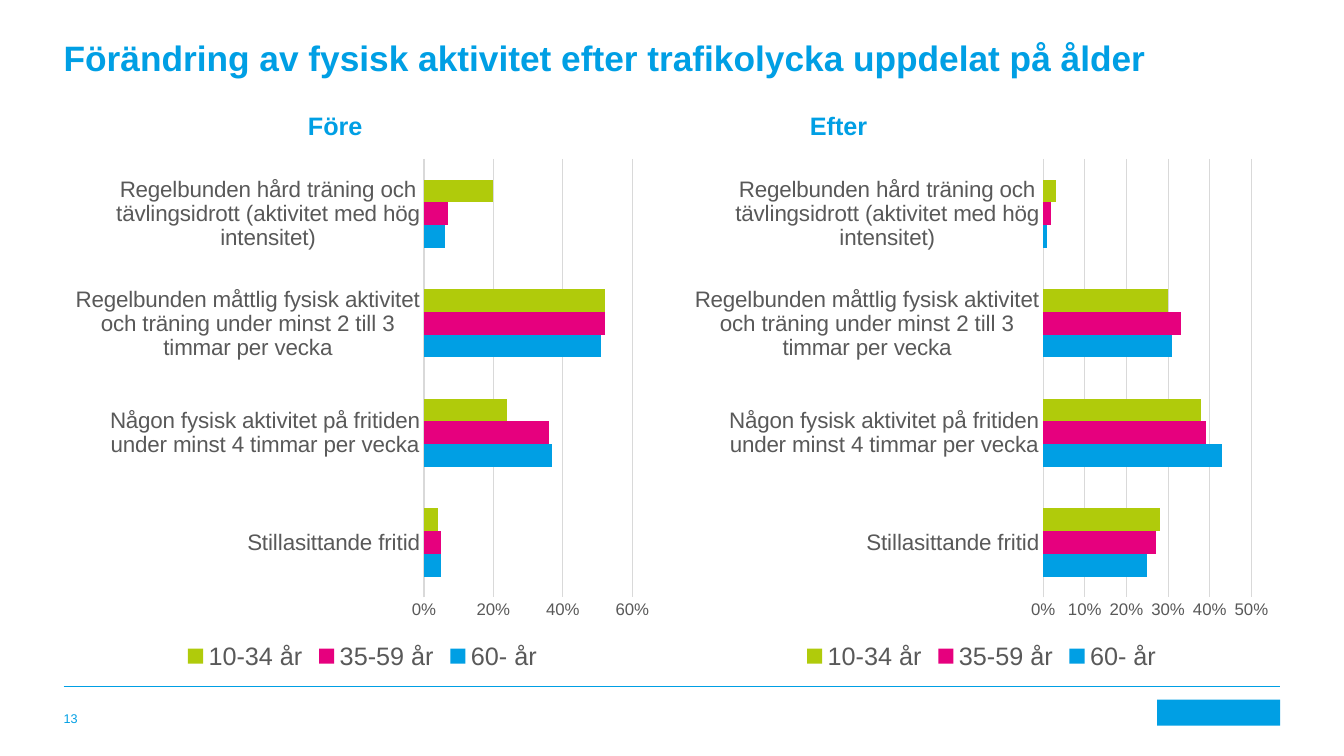
from pptx import Presentation
from pptx.chart.data import CategoryChartData
from pptx.dml.color import RGBColor
from pptx.enum.chart import XL_CHART_TYPE, XL_LEGEND_POSITION, XL_TICK_MARK
from pptx.enum.shapes import MSO_CONNECTOR, MSO_SHAPE
from pptx.enum.text import MSO_ANCHOR
from pptx.util import Pt
from lxml.etree import SubElement
from pptx.oxml.ns import qn

FONT = "Arial"
COLORS = {
    "blue": "009FE4",
    "pink": "E6007E",
    "green": "B0CB0B",
    "label": "595959",
    "grid": "D9D9D9",
    "base": "000000",
}

TITLE = "Förändring av fysisk aktivitet efter trafikolycka uppdelat på ålder"
PAGE_NUMBER = "13"
ACTIVITIES = [
    "Stillasittande fritid",
    "Någon fysisk aktivitet på fritiden under minst 4 timmar per vecka",
    "Regelbunden måttlig fysisk aktivitet och träning under minst 2 till 3 timmar per vecka",
    "Regelbunden hård träning och tävlingsidrott (aktivitet med hög intensitet)",
]
AGE_GROUPS = [("60- år", "blue"), ("35-59 år", "pink"), ("10-34 år", "green")]
PERIODS = [
    {
        "heading": "Före",
        "heading_left": 220,
        "axis": (0.6, 0.2),
        "shares": [
            (0.05, 0.37, 0.51, 0.06),
            (0.05, 0.36, 0.52, 0.07),
            (0.04, 0.24, 0.52, 0.2),
        ],
    },
    {
        "heading": "Efter",
        "heading_left": 578.5,
        "axis": (0.5, 0.1),
        "shares": [
            (0.25, 0.43, 0.31, 0.01),
            (0.27, 0.39, 0.33, 0.02),
            (0.28, 0.38, 0.3, 0.03),
        ],
    },
]

SLIDE_WIDTH, SLIDE_HEIGHT = 960, 540
MARGIN = 45.5
CONTENT_WIDTH = SLIDE_WIDTH - 2 * MARGIN
CHART_GAP = 15.5
CHART_WIDTH = (CONTENT_WIDTH - CHART_GAP) / 2
CHART_TOP, CHART_HEIGHT = 106, 376.5
FOOTER_RULE_TOP = 490.5
FOOTER_TOP, FOOTER_HEIGHT = 499.7, 18.7
LOGO_WIDTH = 88


def color(name):
    return RGBColor.from_string(COLORS[name])


def style_font(font, size, tint, bold=False):
    font.name = FONT
    font.size = Pt(size)
    font.bold = bold
    font.color.rgb = color(tint)


def add_text(slide, text, *, left, top, width, height, size, bold=False, anchor=MSO_ANCHOR.TOP):
    frame = slide.shapes.add_textbox(Pt(left), Pt(top), Pt(width), Pt(height)).text_frame
    frame.word_wrap = True
    frame.vertical_anchor = anchor
    frame.margin_left = frame.margin_right = frame.margin_top = frame.margin_bottom = 0
    run = frame.paragraphs[0].add_run()
    run.text = text
    style_font(run.font, size, "blue", bold)


def style_line(line, tint, width):
    line.color.rgb = color(tint)
    line.width = Pt(width)


def add_activity_chart(slide, period, left):
    chart_data = CategoryChartData(number_format="0%")
    chart_data.categories = ACTIVITIES
    for (age_group, _), shares in zip(AGE_GROUPS, period["shares"]):
        chart_data.add_series(age_group, shares)
    chart = slide.shapes.add_chart(
        XL_CHART_TYPE.BAR_CLUSTERED,
        Pt(left), Pt(CHART_TOP), Pt(CHART_WIDTH), Pt(CHART_HEIGHT),
        chart_data,
    ).chart
    style_font(chart.font, 10, "base")
    chart.has_title = False
    chart.has_legend = True
    chart.legend.position = XL_LEGEND_POSITION.BOTTOM
    chart.legend.include_in_layout = False
    style_font(chart.legend.font, 18, "label")

    plot = chart.plots[0]
    plot.gap_width = 182
    plot.vary_by_categories = False
    for series, (_, tint) in zip(plot.series, AGE_GROUPS):
        series.invert_if_negative = False
        series.format.fill.solid()
        series.format.fill.fore_color.rgb = color(tint)

    activity_axis, share_axis = chart.category_axis, chart.value_axis
    for axis, size in ((activity_axis, 16), (share_axis, 12)):
        axis.major_tick_mark = axis.minor_tick_mark = XL_TICK_MARK.NONE
        style_font(axis.tick_labels.font, size, "label")
    activity_axis.has_major_gridlines = False
    style_line(activity_axis.format.line, "grid", 0.75)
    share_axis.minimum_scale = 0
    share_axis.maximum_scale, share_axis.major_unit = period["axis"]
    share_axis.has_major_gridlines = True
    style_line(share_axis.major_gridlines.format.line, "grid", 0.75)
    share_axis.format.line.fill.background()
    share_axis.tick_labels.number_format = "0%"
    share_axis.tick_labels.number_format_is_linked = False


def add_footer(slide):
    right = SLIDE_WIDTH - MARGIN
    rule = slide.shapes.add_connector(
        MSO_CONNECTOR.STRAIGHT, Pt(MARGIN), Pt(FOOTER_RULE_TOP), Pt(right), Pt(FOOTER_RULE_TOP)
    )
    style_line(rule.line, "blue", 0.5)
    SubElement(rule._element.spPr, qn("a:effectLst"))
    add_text(slide, PAGE_NUMBER, left=MARGIN, top=FOOTER_TOP, width=42, height=FOOTER_HEIGHT,
             size=9, anchor=MSO_ANCHOR.BOTTOM)
    logo = slide.shapes.add_shape(
        MSO_SHAPE.RECTANGLE, Pt(right - LOGO_WIDTH), Pt(FOOTER_TOP), Pt(LOGO_WIDTH), Pt(FOOTER_HEIGHT)
    )
    logo.shadow.inherit = False
    logo.fill.solid()
    logo.fill.fore_color.rgb = color("blue")
    logo.line.fill.background()


def main():
    presentation = Presentation()
    presentation.slide_width, presentation.slide_height = Pt(SLIDE_WIDTH), Pt(SLIDE_HEIGHT)
    slide = presentation.slides.add_slide(presentation.slide_layouts[6])
    add_text(slide, TITLE, left=MARGIN, top=26, width=CONTENT_WIDTH, height=30, size=25.2, bold=True)
    for column, period in enumerate(PERIODS):
        add_text(slide, period["heading"], left=period["heading_left"], top=78.5,
                 width=80, height=21, size=18, bold=True)
        add_activity_chart(slide, period, MARGIN + column * (CHART_WIDTH + CHART_GAP))
    add_footer(slide)
    presentation.save("out.pptx")


if __name__ == "__main__":
    main()
